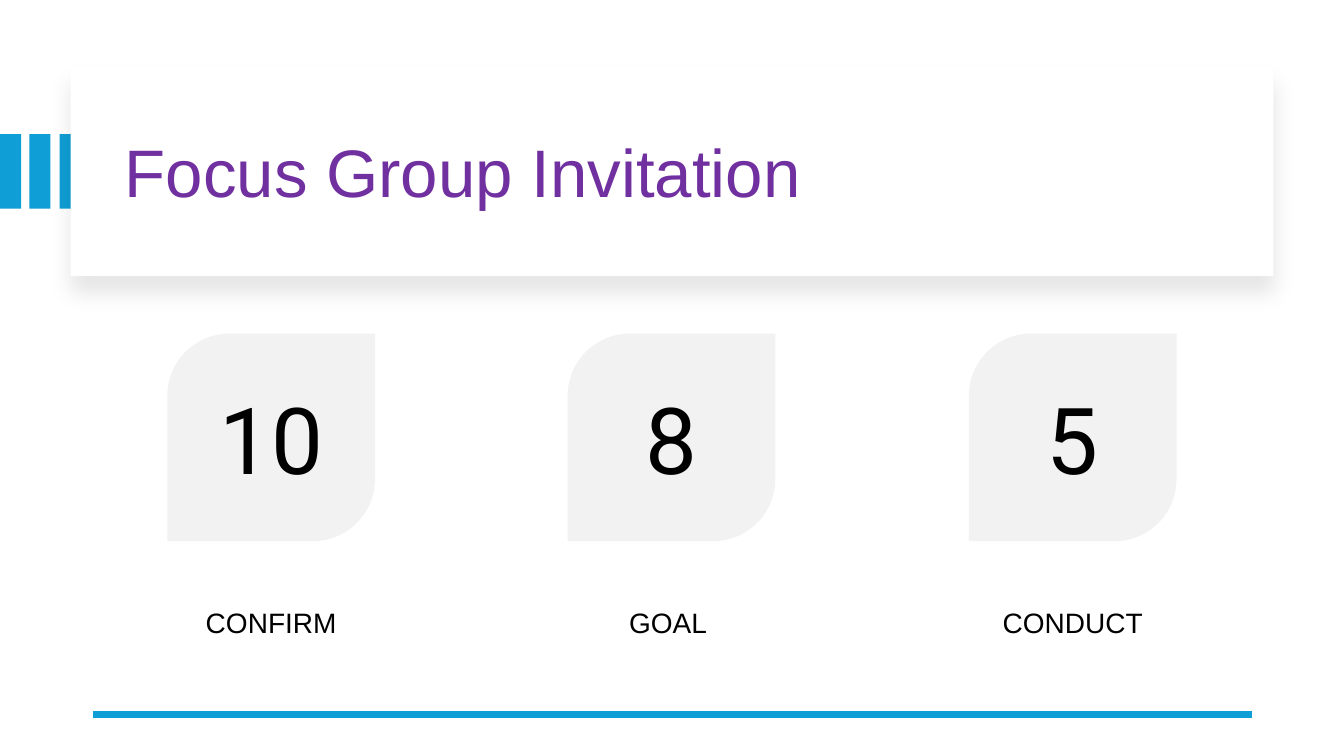
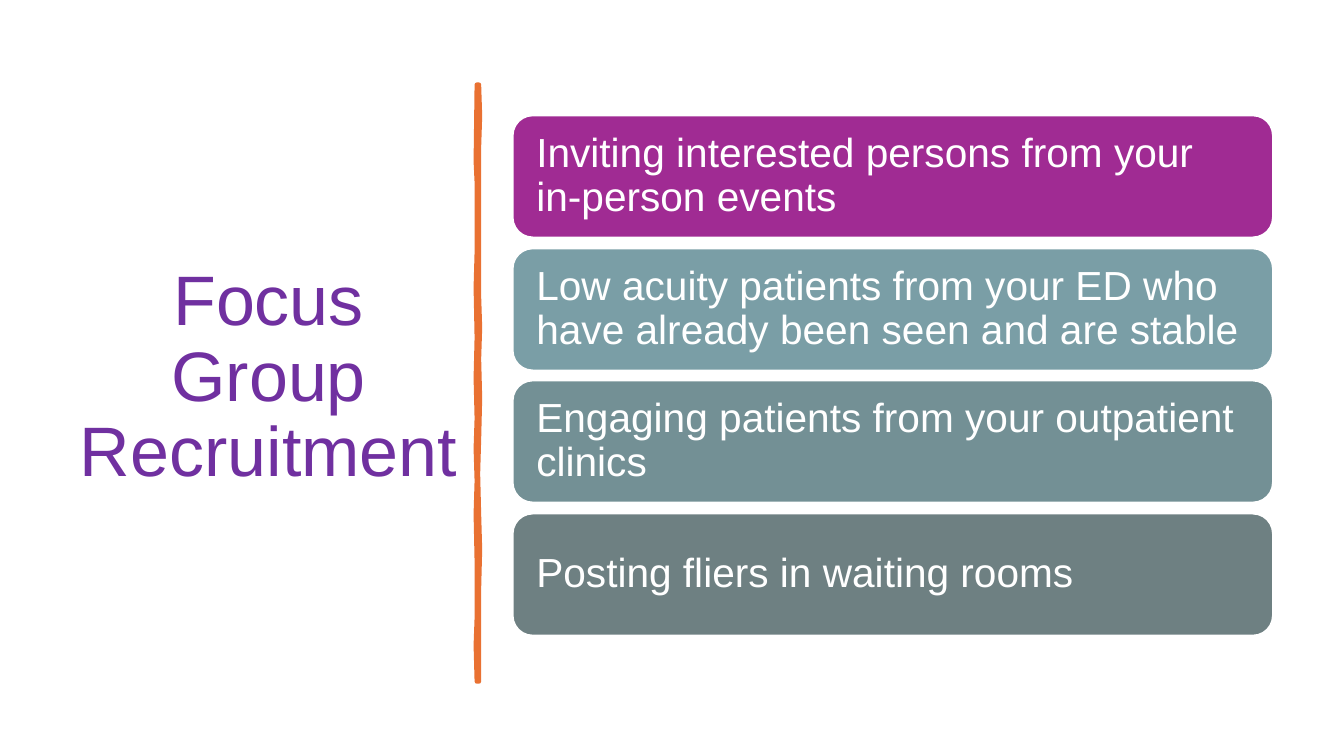
"""Build two slides on inviting and recruiting focus group members."""
from lxml import etree
from pptx import Presentation
from pptx import util as u
from pptx.dml.color import RGBColor
from pptx.enum import shapes, text
from pptx.oxml import parse_xml
from pptx.oxml.ns import nsdecls, qn

PX = u.Inches(1) // 100
WHITE = RGBColor(0xFF, 0xFF, 0xFF)
BLACK = RGBColor(0x00, 0x00, 0x00)
PURPLE = RGBColor(0x70, 0x30, 0xA0)
BLUE = RGBColor(0x0F, 0x9E, 0xD5)
PALE = RGBColor(0xF2, 0xF2, 0xF2)
ORANGE = RGBColor(0xE9, 0x71, 0x32)
MAGENTA = RGBColor(0xA0, 0x2B, 0x93)
TEAL = RGBColor(0x7A, 0x9E, 0xA6)
SAGE = RGBColor(0x73, 0x90, 0x95)
SLATE = RGBColor(0x6E, 0x80, 0x82)

RECT = shapes.MSO_SHAPE.RECTANGLE
LEAF = shapes.MSO_SHAPE.ROUND_2_DIAG_RECTANGLE
ROUNDED = shapes.MSO_SHAPE.ROUNDED_RECTANGLE
LEFT, CENTER = text.PP_ALIGN.LEFT, text.PP_ALIGN.CENTER
TOP, MIDDLE = text.MSO_ANCHOR.TOP, text.MSO_ANCHOR.MIDDLE

TITLE = dict(color=PURPLE, spacing=0.9, insets=(10, 5))
NUMBER = dict(size=66, name="Roboto", align=CENTER, insets=(10, 10))
LABEL = dict(size=20, align=CENTER, anchor=TOP)
ROW = dict(size=29, color=WHITE, spacing=0.9, insets=(18, 18))


def add_box(page, left, top, width, height, preset=RECT, fill=None):
    """Add a plain shape, or a text box when there is no fill."""
    place = [length * PX for length in (left, top, width, height)]
    if fill is None:
        return page.shapes.add_textbox(*place)
    box = page.shapes.add_shape(preset, *place)
    box.shadow.inherit = False
    box.fill.solid()
    box.fill.fore_color.rgb = fill
    box.line.fill.background()
    return box


def write(box, words, size, name="Arial", color=BLACK, align=LEFT,
          anchor=MIDDLE, spacing=1.0, insets=(0, 0)):
    """Put one formatted paragraph into a box."""
    frame = box.text_frame
    across, down = (inset * PX for inset in insets)
    para = frame.paragraphs[0]
    span = para.add_run()
    span.text = words
    formats = (
        (frame, dict(word_wrap=True, vertical_anchor=anchor,
                     margin_left=across, margin_right=across,
                     margin_top=down, margin_bottom=down)),
        (para, dict(alignment=align, line_spacing=spacing)),
        (span.font, dict(size=u.Pt(size), name=name)),
    )
    for target, values in formats:
        for key, value in values.items():
            setattr(target, key, value)
    span.font.color.rgb = color


deck = Presentation()
deck.slide_width, deck.slide_height = 1333 * PX, 750 * PX
blank = deck.slide_layouts[6]

page = deck.slides.add_slide(blank)
for i in range(3):
    add_box(page, i * 59 // 2, 133, 21, 74, fill=BLUE)

panel = add_box(page, 70, 67, 1193, 207, fill=WHITE)
effects = panel._element.spPr.find(qn("a:effectLst"))
effects.append(parse_xml(
    f'<a:outerShdw {nsdecls("a")} blurRad="{u.Pt(15)}" dist="{u.Pt(11)}" '
    'dir="5400000" algn="t" rotWithShape="0"><a:srgbClr val="000000">'
    '<a:alpha val="10000"/></a:srgbClr></a:outerShdw>'))
write(add_box(page, 114, 89, 1113, 170), "Focus Group Invitation", 48, **TITLE)

rule = page.shapes.add_connector(
    shapes.MSO_CONNECTOR.STRAIGHT, 1242 * PX, 709 * PX, 92 * PX, 709 * PX)
rule.line.color.rgb = BLUE
rule.line.width = u.Pt(4.5)
etree.SubElement(rule._element.spPr, qn("a:effectLst"))

steps = (("10", "CONFIRM"), ("8", "GOAL "), ("5", "CONDUCT"))
for i, (number, label) in enumerate(steps):
    left = 166 + i * 795 // 2
    card = add_box(page, left, 331, 206, 206, LEAF, PALE)
    card.adjustments[0] = 0.3
    write(card, number, **NUMBER)
    write(add_box(page, left - 66, 601, 338, 79), label, **LABEL)

page = deck.slides.add_slide(blank)
write(add_box(page, 69, 70, 395, 611), "Focus Group Recruitment", 50,
      align=CENTER, **TITLE)

right_edge = ((475, 84), (476, 115), (475, 146), (475, 294), (476, 325),
              (475, 356), (476, 395), (475, 436), (474, 470), (475, 510),
              (476, 545), (475, 584), (475, 676))
left_edge = ((473, 676), (472, 640), (473, 613), (473, 557), (472, 510),
             (473, 477), (472, 445), (473, 415), (472, 375), (473, 335),
             (472, 285), (473, 250), (473, 181), (472, 160), (473, 84))
brush = page.shapes.build_freeform(*right_edge[0], scale=PX)
brush.add_line_segments(right_edge[1:] + left_edge, close=True)
divider = brush.convert_to_shape()
divider.shadow.inherit = False
divider.fill.solid()
divider.fill.fore_color.rgb = ORANGE
divider.line.color.rgb = ORANGE
divider.line.width = u.Pt(3.25)
etree.SubElement(divider._element.spPr.find(qn("a:ln")), qn("a:round"))

sources = (
    ("Inviting interested persons from your in-person events", MAGENTA),
    ("Low acuity patients from your ED who have already been seen and are stable", TEAL),
    ("Engaging patients from your outpatient clinics", SAGE),
    ("Posting fliers in waiting rooms", SLATE),
)
for i, (words, fill) in enumerate(sources):
    row = add_box(page, 508, 114 + round(i * 395 / 3), 755, 122, ROUNDED, fill)
    row.line.color.rgb = WHITE
    row.line.width = u.Pt(2)
    write(row, words, **ROW)

deck.save("out.pptx")
